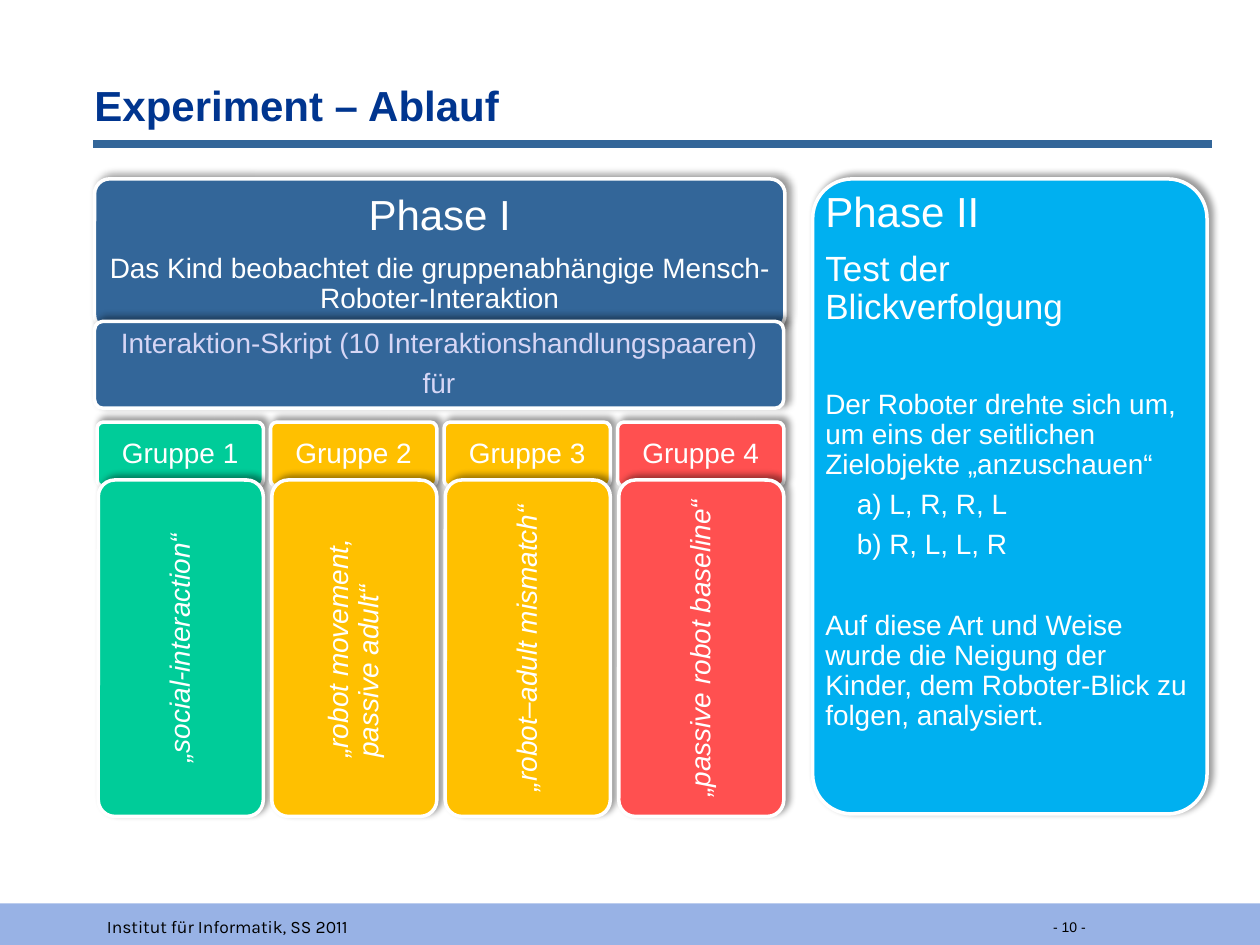
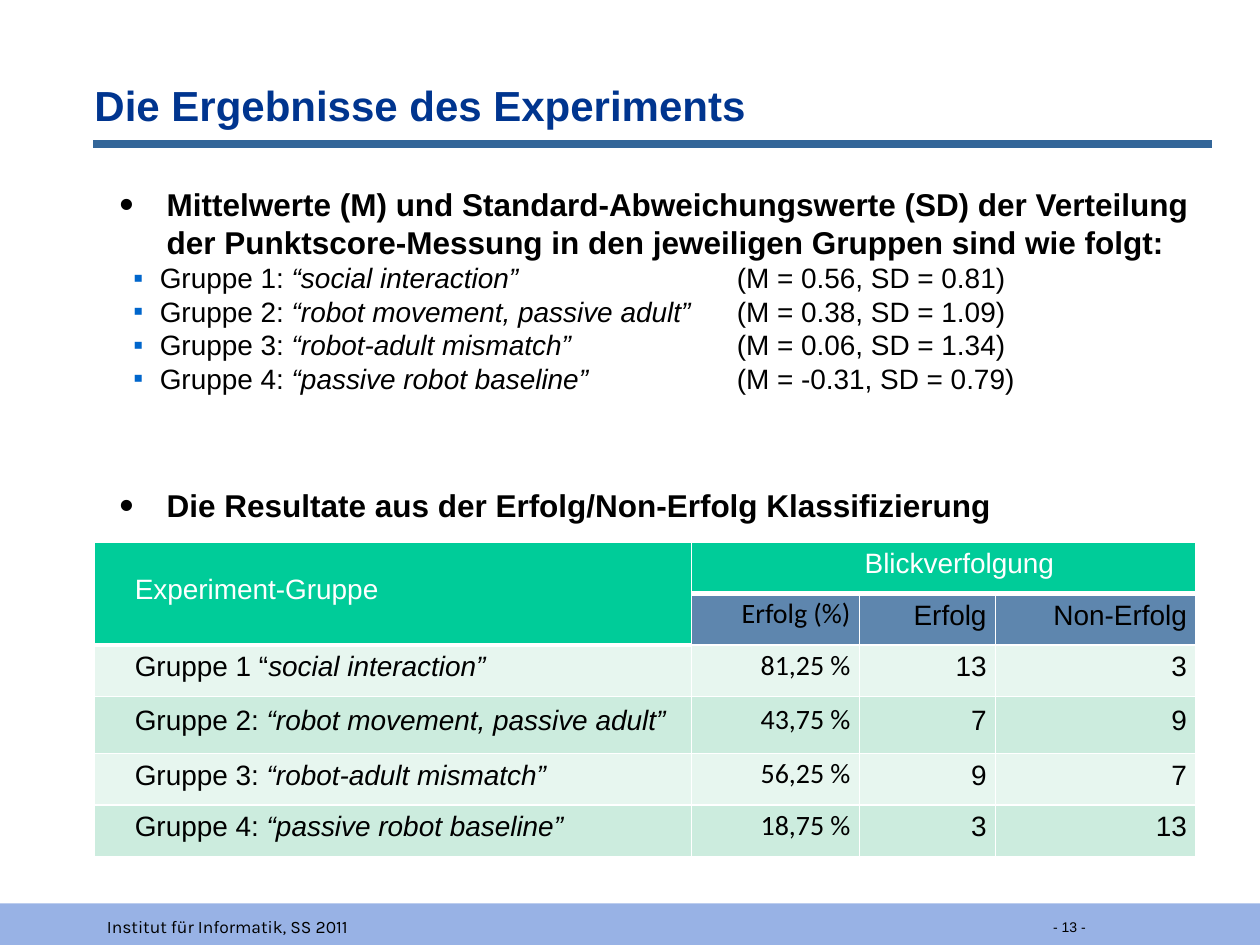
from dataclasses import dataclass

from lxml import etree
from pptx import Presentation
from pptx.dml.color import RGBColor
from pptx.enum.shapes import MSO_CONNECTOR, MSO_SHAPE
from pptx.enum.text import MSO_ANCHOR, PP_ALIGN
from pptx.oxml.ns import qn
from pptx.util import Inches, Pt

ROUNDED, RECTANGLE = MSO_SHAPE.ROUNDED_RECTANGLE, MSO_SHAPE.RECTANGLE
STRAIGHT = MSO_CONNECTOR.STRAIGHT
LEFT, CENTER, RIGHT = PP_ALIGN.LEFT, PP_ALIGN.CENTER, PP_ALIGN.RIGHT
TOP, MIDDLE = MSO_ANCHOR.TOP, MSO_ANCHOR.MIDDLE

COLORS = {
    "band": "3366CC", "rule": "336699", "title": "00358F", "black": "000000",
    "white": "FFFFFF", "lavender": "D6D6F5", "green": "00CC99", "amber": "FFC000",
    "red": "FF5050", "sky": "00B0F0", "bullet": "0066CC",
    "light_row": "E7F6EF", "dark_row": "CCECDE",
}
CORNER = 0.1  # corner radius of the cards, as a share of the shorter side


def grid(count):
    """Length of grid cells; the slide has 100 columns and 75 rows."""
    return Inches(count / 10)


@dataclass
class Box:
    left: float
    top: float
    width: float
    height: float

    def area(self, left, top, width, height):
        return Box(self.left + left, self.top + top, width, height)

    def lengths(self):
        return [grid(side) for side in (self.left, self.top, self.width, self.height)]


SLIDE = Box(0, 0, 100, 75)
CONTENT = SLIDE.area(7.5, 14.2, 88.3, 57)


def rgb(name):
    return RGBColor.from_string(COLORS[name])


def add_xml(parent, tag, **attributes):
    return etree.SubElement(parent, qn(tag), {key: str(value) for key, value in attributes.items()})


def set_opacity(properties, share):
    color = properties.find(qn("a:solidFill"))[0]
    add_xml(color, "a:alpha", val=int(share * 100000))


def style_font(font, size, color, name="Arial", bold=False):
    font.size, font.name, font.bold = Pt(size), name, bold
    font.color.rgb = rgb(color)


def add_runs(paragraph, runs):
    """Fill a paragraph from plain text or from (text, italic) pairs."""
    if isinstance(runs, str):
        runs = [(runs, False)]
    for text, italic in runs:
        run = paragraph.add_run()
        run.text = text
        if italic:
            run.font.italic = True


def next_paragraph(frame, index):
    return frame.paragraphs[0] if index == 0 else frame.add_paragraph()


def add_text_box(slide, box, margins=(1, 0.5, 1, 0.5), wrap=True):
    frame = slide.shapes.add_textbox(*box.lengths()).text_frame
    set_margins(frame, margins)
    frame.word_wrap = wrap
    return frame


def set_margins(target, margins):
    (target.margin_left, target.margin_top,
     target.margin_right, target.margin_bottom) = map(grid, margins)


def add_label(slide, box, text, size, color="black", name="Arial", bold=False, **options):
    paragraph = add_text_box(slide, box, **options).paragraphs[0]
    add_runs(paragraph, text)
    style_font(paragraph.font, size, color, name, bold)


def add_frame(slide, title, number):
    """Title, rule and footer band shared by all slides."""
    add_label(slide, SLIDE.area(7.5, 5.8, 71.7, 6.7), title, 24, "title", bold=True,
              margins=(0, 0.5, 1, 0.5), wrap=False)
    rule = slide.shapes.add_connector(STRAIGHT, grid(7.4), grid(11.4), grid(96.2), grid(11.4))
    rule.line.color.rgb = rgb("rule")
    rule.line.width = Pt(4.5)
    add_xml(rule._element.spPr, "a:effectLst")

    footer = SLIDE.area(0, 71.7, 100, 3.3)
    band = slide.shapes.add_shape(RECTANGLE, *footer.lengths())
    band.shadow.inherit = False
    band.fill.solid()
    band.fill.fore_color.rgb = rgb("band")
    set_opacity(band._element.spPr, 0.5)
    band.line.fill.background()
    add_label(slide, footer.area(7.5, 0.5, 62.2, 1.3), "Institut für Informatik, SS 2011", 10, name="Karla")
    add_label(slide, footer.area(82.6, 0.7, 11.4, 2.6), f"- {number} -", 8)


def add_card(slide, box, fill, lines, margin=0.7, color="white", align=CENTER, anchor=MIDDLE,
             vertical=False):
    """Rounded card; each line is (runs, size, space before in points, indent in columns)."""
    card = slide.shapes.add_shape(ROUNDED, *box.lengths())
    card.adjustments[0] = CORNER
    card.fill.solid()
    card.fill.fore_color.rgb = rgb(fill)
    card.line.color.rgb = rgb("white")
    card.line.width = Pt(2)
    card.shadow.inherit = False
    effects = card._element.spPr.find(qn("a:effectLst"))
    shadow = add_xml(effects, "a:outerShdw", blurRad=Pt(4), dist=Pt(3), dir=315 * 60000,
                     algn="bl", rotWithShape=0)
    shadow_color = add_xml(shadow, "a:srgbClr", val=COLORS["black"])
    add_xml(shadow_color, "a:alpha", val=40000)

    # The rounded corners already push the text inwards
    inset = max(0, margin - 0.29 * CORNER * min(box.width, box.height))
    frame = card.text_frame
    set_margins(frame, [inset] * 4)
    frame.word_wrap = True
    frame.vertical_anchor = anchor
    if vertical:
        body = frame._txBody.bodyPr
        body.set("vert", "vert270")
        body.set("anchorCtr", "1")
    for index, (runs, size, before, indent) in enumerate(lines):
        paragraph = next_paragraph(frame, index)
        paragraph.alignment = align
        paragraph.line_spacing = 0.9
        paragraph.space_after = Pt(0.35 * size)
        if before:
            paragraph.space_before = Pt(before)
        if indent:
            paragraph._p.get_or_add_pPr().set("marL", str(grid(indent)))
        add_runs(paragraph, runs)
        style_font(paragraph.font, size, color)


def add_phase_one(slide, box):
    add_card(slide, box.area(0, 0, box.width, 12), "rule", [
        ("Phase I", 24, 0, 0),
        ("Das Kind beobachtet die gruppenabhängige Mensch-Roboter-Interaktion", 16, 0, 0),
    ], margin=1)
    add_card(slide, box.area(0, 11.3, box.width - 0.1, 6.9), "rule", [
        ("Interaktion-Skript (10 Interaktionshandlungspaaren)", 16, 0, 0),
        ("für", 16, 0, 0),
    ], color="lavender")

    # One column for each group: heading with its condition below
    groups = [
        ("green", "„social-interaction“"),
        ("amber", "„robot movement, passive adult“"),
        ("amber", "„robot–adult mismatch“"),
        ("red", "„passive robot baseline“"),
    ]
    pitch = 13.77
    for index, (color, condition) in enumerate(groups):
        left = 0.2 + index * pitch
        add_card(slide, box.area(left, 19.3, 13.2, 5.1), color, [(f"Gruppe {index + 1}", 16, 0, 0)])
        add_card(slide, box.area(left + 0.1, 23.9, 13.1, 26.7), color,
                 [([(condition, True)], 16, 0, 0)], align=LEFT, vertical=True)


def add_phase_two(slide, box):
    add_card(slide, box, "sky", [
        ("Phase II", 24, 0, 0),
        ("Test der Blickverfolgung", 20, 0, 0),
        ("Der Roboter drehte sich um, um eins der seitlichen Zielobjekte „anzuschauen“", 16, 29, 0),
        ("a) L, R, R, L", 16, 0, 2.5),
        ("b) R, L, L, R", 16, 0, 2.5),
        ("Auf diese Art und Weise wurde die Neigung der Kinder, dem Roboter-Blick zu folgen, "
         "analysiert.", 16, 23, 0),
    ], margin=1, align=LEFT, anchor=TOP)


def set_bullet(paragraph, character, left, hanging, color, percent=100, tab=None):
    properties = paragraph._p.get_or_add_pPr()
    properties.set("marL", str(grid(left)))
    properties.set("indent", str(-grid(hanging)))
    bullet_color = add_xml(properties, "a:buClr")
    add_xml(bullet_color, "a:srgbClr", val=COLORS[color])
    add_xml(properties, "a:buSzPct", val=percent * 1000)
    add_xml(properties, "a:buFont", typeface="Arial")
    add_xml(properties, "a:buChar", char=character)
    if tab:
        add_xml(add_xml(properties, "a:tabLst"), "a:tab", pos=grid(tab), algn="l")


def add_findings(slide, box):
    frame = add_text_box(slide, box)
    scores = [
        ("“social interaction”", "0.56", "0.81"),
        ("“robot movement, passive adult”", "0.38", "1.09"),
        ("“robot-adult mismatch”", "0.06", "1.34"),
        ("“passive robot baseline”", "-0.31", "0.79"),
    ]
    headings = {
        0: "Mittelwerte (M) und Standard-Abweichungswerte (SD) der Verteilung der Punktscore-Messung "
           "in den jeweiligen Gruppen sind wie folgt:",
        len(scores) + 1: "Die Resultate aus der Erfolg/Non-Erfolg Klassifizierung",
    }
    for index in range(len(scores) + 2):
        paragraph = next_paragraph(frame, index)
        if index in headings:
            set_bullet(paragraph, "•", 4.75, 3.75, "black", percent=130)
            if index:
                paragraph.space_before = Pt(52)
            add_runs(paragraph, headings[index])
            style_font(paragraph.font, 18, "black", bold=True)
        else:
            condition, mean, deviation = scores[index - 1]
            set_bullet(paragraph, "▪", 4.2, 2.1, "bullet", tab=50)
            add_runs(paragraph, [(f"Gruppe {index}: ", False), (condition, True),
                                 (f"\t(M = {mean}, SD = {deviation})", False)])
            style_font(paragraph.font, 16, "black")


def set_borders(cell, bottom):
    properties = cell._tc.get_or_add_tcPr()
    for side, width in (("L", 1), ("R", 1), ("T", 1), ("B", bottom)):
        line = add_xml(properties, f"a:ln{side}", w=Pt(width))
        add_xml(add_xml(line, "a:solidFill"), "a:srgbClr", val=COLORS["white"])


def add_results_table(slide, box):
    rows = [
        ["Experiment-Gruppe", "Blickverfolgung", "", ""],
        ["", "Erfolg (%)", "Erfolg", "Non-Erfolg"],
        [[("Gruppe 1 “", False), ("social interaction”", True)], "81,25 %", "13", "3"],
        [[("Gruppe 2: ", False), ("“robot movement, passive adult”", True)], "43,75 %", "7", "9"],
        [[("Gruppe 3: ", False), ("“robot-adult mismatch”", True)], "56,25 %", "9", "7"],
        [[("Gruppe 4: ", False), ("“passive robot baseline”", True)], "18,75 %", "3", "13"],
    ]
    row_fills = ["green", "rule"] + ["light_row", "dark_row"] * 2
    table = slide.shapes.add_table(len(rows), len(rows[0]), *box.lengths()).table
    for column, width in zip(table.columns, (47.4, 13.3, 10.8, 15.9)):
        column.width = grid(width)
    for row, height in zip(table.rows, (4.1, 4.1, 4.1, 4.5, 4.1, 4.1)):
        row.height = grid(height)
    table.cell(0, 0).merge(table.cell(1, 0))
    table.cell(0, 1).merge(table.cell(0, 3))

    for row_index, values in enumerate(rows):
        for column_index, value in enumerate(values):
            cell = table.cell(row_index, column_index)
            heading = row_index == 0 or (row_index == 1 and column_index == 0)
            set_borders(cell, 3 if heading else 1)
            cell.fill.solid()
            cell.fill.fore_color.rgb = rgb("green" if heading else row_fills[row_index])
            if row_index == 1 and not heading:
                set_opacity(cell._tc.tcPr, 0.79)
            set_margins(cell, (0.7, 0, 0.7, 0))
            cell.vertical_anchor = MIDDLE
            if not value:
                continue
            paragraph = cell.text_frame.paragraphs[0]
            paragraph._p.get_or_add_pPr().set("marL", str(grid(2.5)))
            paragraph.alignment = LEFT if column_index == 0 else CENTER if heading else RIGHT
            paragraph.line_spacing = Pt(13.5)
            paragraph.space_before = Pt(6)
            add_runs(paragraph, value)
            percent_column = column_index == 1 and not heading
            style_font(paragraph.font, 16, "white" if heading else "black",
                       "Calibri" if percent_column else "Arial")


def build_procedure_slide(slide):
    add_frame(slide, "Experiment – Ablauf", 10)
    add_phase_one(slide, CONTENT.area(0, 0, 54.8, 50.6))
    add_phase_two(slide, CONTENT.area(57, 0, 31.3, 50.4))


def build_results_slide(slide):
    add_frame(slide, "Die Ergebnisse des Experiments", 13)
    add_findings(slide, CONTENT)
    add_results_table(slide, CONTENT.area(0, 28.8, 87.4, 25))


def main():
    presentation = Presentation()
    presentation.slide_width, presentation.slide_height = grid(SLIDE.width), grid(SLIDE.height)
    blank = presentation.slide_layouts[6]
    for build in (build_procedure_slide, build_results_slide):
        build(presentation.slides.add_slide(blank))
    presentation.save("out.pptx")


if __name__ == "__main__":
    main()
